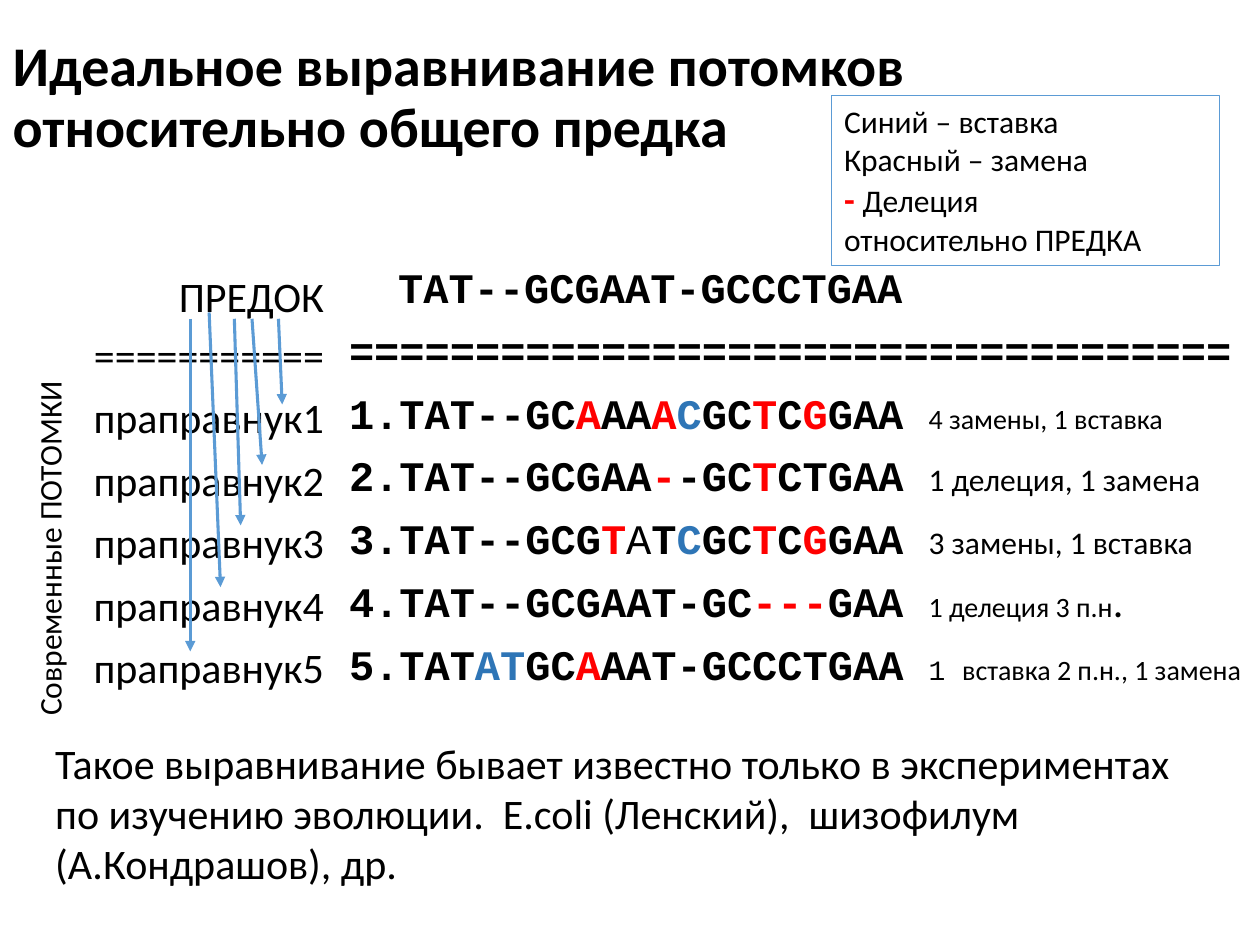
from dataclasses import dataclass, replace

import lxml.etree
import pptx
import pptx.dml.color
import pptx.enum.shapes
import pptx.enum.text
import pptx.oxml.ns
import pptx.util

EMU_PER_PX = 9144  # 100 px to the inch
ALIGN = pptx.enum.text.PP_ALIGN
ANCHOR = pptx.enum.text.MSO_ANCHOR
qn = pptx.oxml.ns.qn


@dataclass(frozen=True)
class Theme:
    text: str = "000000"
    change: str = "FF0000"
    insertion: str = "2E75B6"
    accent: str = "5B9BD5"
    sans: str = "Calibri"
    mono: str = "Courier New"
    title: int = 32
    body: int = 24
    dash: int = 20
    label: int = 18
    small: int = 16


THEME = Theme()


@dataclass(frozen=True)
class Style:
    size: int
    font: str = THEME.sans
    color: str = THEME.text
    bold: bool = False


@dataclass(frozen=True)
class Span:
    text: str
    style: Style


@dataclass(frozen=True)
class Box:
    left: int
    top: int
    width: int
    height: int


@dataclass(frozen=True)
class Arrow:
    x1: int
    y1: int
    x2: int
    y2: int


TITLE = Style(THEME.title, bold=True)
PLAIN = Style(THEME.body)
LABEL = Style(THEME.label)
SMALL = Style(THEME.small)
BASES = Style(THEME.body, THEME.mono, bold=True)
CHANGED = replace(BASES, color=THEME.change)
INSERTED = replace(BASES, color=THEME.insertion)
THIN = replace(BASES, bold=False)
DASH = Style(THEME.dash, color=THEME.change, bold=True)

# Sequences: the ancestor, a rule, then the numbered descendants
ANCESTOR = [Span("TAT--GCGAAT-GCCCTGAA", BASES)]
RULE = [Span("=" * 35, BASES)]
DESCENDANTS = [
    [Span("TAT--GC", BASES), Span("A", CHANGED), Span("AA", BASES), Span("A", CHANGED),
     Span("C", INSERTED), Span("GC", BASES), Span("T", CHANGED), Span("C", BASES),
     Span("G", CHANGED), Span("GAA ", BASES), Span("4 замены, 1 вставка", SMALL)],
    [Span("TAT--GCGAA", BASES), Span("-", CHANGED), Span("-GC", BASES),
     Span("T", CHANGED), Span("CTGAA ", BASES), Span("1 делеция, 1 замена", LABEL)],
    [Span("TAT--GCG", BASES), Span("T", CHANGED), Span("A", THIN), Span("T", BASES),
     Span("C", INSERTED), Span("GC", BASES), Span("T", CHANGED), Span("C", BASES),
     Span("G", CHANGED), Span("GAA ", BASES), Span("3 замены, 1 вставка", LABEL)],
    [Span("TAT--GCGAAT-GC", BASES), Span("---", CHANGED), Span("GAA ", BASES),
     Span("1 делеция 3 п.н", SMALL), Span(".", PLAIN)],
    [Span("TAT", BASES), Span("AT", INSERTED), Span("GC", BASES), Span("A", CHANGED),
     Span("AAT-GCCCTGAA ", BASES), Span("1 ", replace(THIN, size=THEME.small)),
     Span("вставка 2 п.н., 1 замена", SMALL)],
]
LEGEND = [
    [Span("Синий – вставка", LABEL)],
    [Span("Красный – замена", LABEL)],
    [Span("- ", DASH), Span("Делеция", LABEL)],
    [Span("относительно ПРЕДКА", LABEL)],
]
ARROWS = [
    Arrow(151, 253, 151, 517),
    Arrow(166, 248, 175, 466),
    Arrow(186, 253, 191, 417),
    Arrow(200, 253, 208, 369),
    Arrow(221, 253, 224, 321),
]


def px(length: int) -> int:
    return pptx.util.Emu(length * EMU_PER_PX)


def rgb(color: str) -> pptx.dml.color.RGBColor:
    return pptx.dml.color.RGBColor.from_string(color)


def place(shape, box: Box) -> None:
    shape.left, shape.top = px(box.left), px(box.top)
    shape.width, shape.height = px(box.width), px(box.height)


def write(shape, lines: list[list[Span]], align=ALIGN.LEFT, anchor=ANCHOR.TOP,
          wrap: bool = True) -> list:
    """Fill a shape with paragraphs of styled spans and return the paragraphs."""
    frame = shape.text_frame
    frame.text = "\n".join("" for _ in lines)
    frame.auto_size = pptx.enum.text.MSO_AUTO_SIZE.NONE
    frame.word_wrap = wrap
    frame.vertical_anchor = anchor
    for para, spans in zip(frame.paragraphs, lines):
        para.alignment = align
        for span in spans:
            run = para.add_run()
            run.text = span.text
            run.font.name = span.style.font
            run.font.size = pptx.util.Pt(span.style.size)
            run.font.bold = span.style.bold
            run.font.color.rgb = rgb(span.style.color)
    return list(frame.paragraphs)


def set_list_format(para, margin: int, indent: int, numbered: bool) -> None:
    properties = para._p.get_or_add_pPr()
    properties.set("marL", str(px(margin)))
    properties.set("indent", str(px(indent)))
    if numbered:
        lxml.etree.SubElement(properties, qn("a:buFont"), typeface=THEME.mono)
        lxml.etree.SubElement(properties, qn("a:buAutoNum"), type="arabicPeriod")
    else:
        lxml.etree.SubElement(properties, qn("a:buNone"))


def add_text(page, box: Box, lines: list[list[Span]], **options):
    shape = page.shapes.add_textbox(0, 0, 0, 0)
    place(shape, box)
    write(shape, lines, **options)
    return shape


def add_arrow(page, arrow: Arrow) -> None:
    line = page.shapes.add_connector(
        pptx.enum.shapes.MSO_CONNECTOR.STRAIGHT,
        px(arrow.x1), px(arrow.y1), px(arrow.x2), px(arrow.y2))
    line.line.color.rgb = rgb(THEME.accent)
    line.line.width = pptx.util.Pt(1.75)
    lxml.etree.SubElement(line.line._get_or_add_ln(), qn("a:tailEnd"), type="triangle")
    lxml.etree.SubElement(line._element.spPr, qn("a:effectLst"))


def main() -> None:
    deck = pptx.Presentation()
    deck.slide_width, deck.slide_height = px(1000), px(750)
    page = deck.slides.add_slide(deck.slide_layouts[1])

    # Title
    title = page.shapes.title
    place(title, Box(0, 14, 991, 129))
    heading = "Идеальное выравнивание потомков относительно общего предка"
    write(title, [[Span(heading, TITLE)]], anchor=ANCHOR.MIDDLE)[0].line_spacing = 0.9

    # Aligned sequences
    body = page.placeholders[1]
    place(body, Box(267, 207, 733, 357))
    rows = write(body, [ANCESTOR, RULE, *DESCENDANTS])
    for index, para in enumerate(rows):
        para.line_spacing = 0.9
        para.space_before = pptx.util.Pt(10)
        numbered = index >= 2
        set_list_format(para, 0 if index == 1 else 39, -39 if numbered else 0, numbered)

    # Row names
    names = ["ПРЕДОК", "=" * 11] + [f"праправнук{n}" for n in range(1, 6)]
    column = add_text(page, Box(62, 203, 205, 355), [[Span(name, PLAIN)] for name in names],
                      align=ALIGN.RIGHT, wrap=False)
    for index, para in enumerate(column.text_frame.paragraphs):
        para.line_spacing = 1.17 if index < 2 else 1.24

    # Closing remark
    remark = ("Такое выравнивание бывает известно только в экспериментах по изучению "
              "эволюции.  E.coli (Ленский),  шизофилум (А.Кондрашов), др.")
    add_text(page, Box(34, 580, 934, 131), [[Span(remark, PLAIN)]])

    # Descent arrows
    for arrow in ARROWS:
        add_arrow(page, arrow)

    # Legend
    legend = page.shapes.add_shape(pptx.enum.shapes.MSO_SHAPE.RECTANGLE, 0, 0, 0, 0)
    place(legend, Box(660, 76, 308, 135))
    legend.shadow.inherit = False
    legend.fill.background()
    legend.line.color.rgb = rgb(THEME.accent)
    legend.line.width = pptx.util.Pt(0.75)
    write(legend, LEGEND)

    # Side label
    side = add_text(page, Box(-104, 415, 286, 40), [[Span("Современные ПОТОМКИ", LABEL)]])
    side.rotation = 270

    deck.save("out.pptx")


if __name__ == "__main__":
    main()
